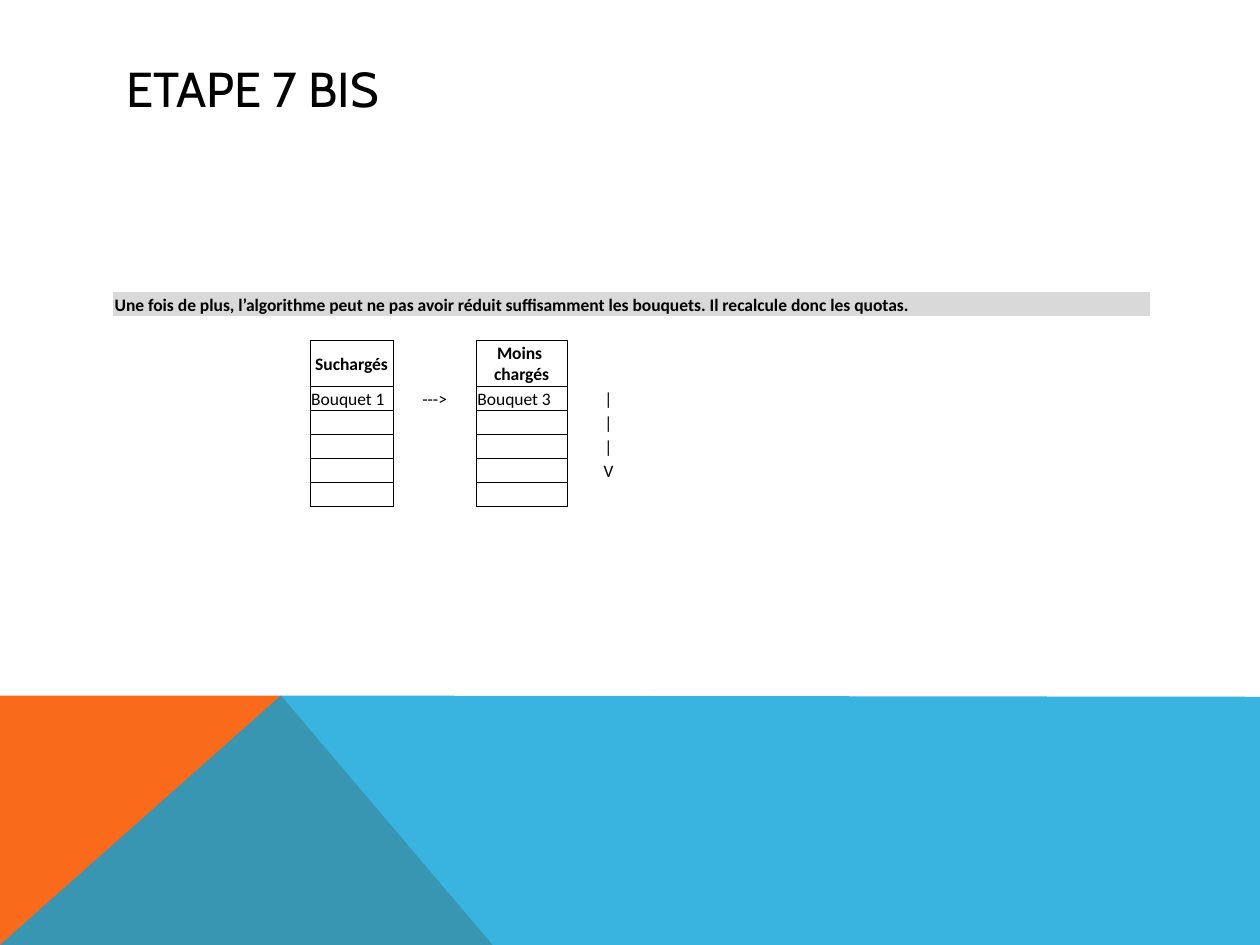
"""Build the "Etape 7 bis" slide with its load-balancing table."""
import pptx
import pptx.dml.color
import pptx.enum.text
import pptx.oxml
import pptx.oxml.ns
import pptx.util

Inches, Pt = pptx.util.Inches, pptx.util.Pt
ANCHOR, ALIGN = pptx.enum.text.MSO_ANCHOR, pptx.enum.text.PP_ALIGN
NS = pptx.oxml.ns.nsdecls("a")
NO_STYLE = "{2D5ABB26-0587-4C30-8999-92F81FD0307C}"


def rgb(value):
    """Turn a hex string into a colour."""
    return pptx.dml.color.RGBColor.from_string(value)


class Deck:
    """Holds the style and the current slide."""

    black, grey, orange, blue = "000000", "D9D9D9", "F96A1B", "08A1D9"
    title_font, body_font = "Cabin", "Calibri"

    def __init__(self):
        """Start a presentation with one title-only slide."""
        self.prs = pptx.Presentation()
        self.prs.slide_width, self.prs.slide_height = Inches(10), Inches(7.5)
        self.s = self.prs.slides.add_slide(self.prs.slide_layouts[5])

    def font(self, p, name, size, bold=False):
        """Set the font of a paragraph."""
        p.font.name, p.font.size, p.font.bold = name, Pt(size), bold
        p.font.color.rgb = rgb(self.black)

    def polygon(self, points, color, alpha=100):
        """Draw a filled outline without a line."""
        points = [(Inches(x), Inches(y)) for x, y in points]
        fb = self.s.shapes.build_freeform(*points[0])
        fb.add_line_segments(points[1:], close=True)
        sp = fb.convert_to_shape()
        sp.shadow.inherit = False
        sp.line.fill.background()
        sp.fill.solid()
        sp.fill.fore_color.rgb = rgb(color)
        if alpha < 100:
            clr = sp.fill._xPr.find(".//" + pptx.oxml.ns.qn("a:srgbClr"))
            clr.append(pptx.oxml.parse_xml(f'<a:alpha {NS} val="{alpha * 1000}"/>'))

    def title(self, text, left, top, width, height):
        """Fill and place the title."""
        sp = self.s.shapes.title
        sp.left, sp.top, sp.width, sp.height = map(Inches, (left, top, width, height))
        tf = sp.text_frame
        tf.text, tf.vertical_anchor = text, ANCHOR.MIDDLE
        p = tf.paragraphs[0]
        p.alignment = ALIGN.LEFT
        self.font(p, self.title_font, 28)

    def table(self, left, top, widths, heights):
        """Add a plain table with empty cells."""
        frame = self.s.shapes.add_table(
            len(heights), len(widths), Inches(left), Inches(top),
            Inches(sum(widths)), Inches(sum(heights)))
        tbl = frame.table
        tbl.first_row = tbl.horz_banding = False
        tbl._tbl.tblPr.find(pptx.oxml.ns.qn("a:tableStyleId")).text = NO_STYLE
        for col, width in zip(tbl.columns, widths):
            col.width = Inches(width)
        for row, height in zip(tbl.rows, heights):
            row.height = Inches(height)
        for cell in tbl.iter_cells():
            self.cell(cell)
        return tbl

    def cell(self, cell, text="", bold=False, align=ALIGN.LEFT, anchor=ANCHOR.BOTTOM):
        """Write and format a cell."""
        cell.margin_left = cell.margin_right = cell.margin_top = Inches(0.01)
        cell.margin_bottom = 0
        cell.vertical_anchor = anchor
        cell.fill.background()
        p = cell.text_frame.paragraphs[0]
        p.text, p.alignment = text, align
        self.font(p, self.body_font, 10, bold)
        if not text and p._p.find(pptx.oxml.ns.qn("a:endParaRPr")) is None:
            p._p.append(pptx.oxml.parse_xml(f'<a:endParaRPr {NS} sz="1000"/>'))

    def box(self, cell):
        """Draw a thin border on all sides of a cell."""
        tcPr = cell._tc.get_or_add_tcPr()
        for i, side in enumerate("LRTB"):
            tcPr.insert(i, pptx.oxml.parse_xml(
                f'<a:ln{side} {NS} w="{Pt(0.5)}"><a:solidFill>'
                f'<a:srgbClr val="{self.black}"/></a:solidFill></a:ln{side}>'))


def main():
    """Build and save the slide."""
    d = Deck()
    d.polygon([(0, 7.5), (0, 5.52), (2.23, 5.52), (3.91, 7.5)], d.orange)
    d.polygon([(0, 7.5), (2.23, 5.52), (10, 5.53), (10, 7.5)], d.blue, 80)
    d.title("ETAPE 7 BIS", 0.9, 0.4, 8.22, 0.6)

    widths = [1.56, 0.66, 0.66, 0.72, 0.66, 0.66, 0.64, 0.66, 0.66, 0.62, 0.73]
    heights = [0.19, 0.19, 0.37] + [0.19] * 5
    tbl = d.table(0.9, 2.32, widths, heights)

    banner = tbl.cell(0, 0)
    banner.merge(tbl.cell(0, len(widths) - 1))
    d.cell(banner, "Une fois de plus, l’algorithme peut ne pas avoir réduit "
           "suffisamment les bouquets. Il recalcule donc les quotas.", bold=True)
    banner.fill.solid()
    banner.fill.fore_color.rgb = rgb(d.grey)

    for col, heading, item in [(1, "Suchargés", "Bouquet 1"),
                               (3, "Moins \vchargés", "Bouquet 3")]:
        d.cell(tbl.cell(2, col), heading, True, ALIGN.CENTER, ANCHOR.MIDDLE)
        d.cell(tbl.cell(3, col), item)
        for row in range(2, len(heights)):
            d.box(tbl.cell(row, col))

    d.cell(tbl.cell(3, 2), "--->", align=ALIGN.CENTER)
    for row, mark in enumerate("|||V", 3):
        d.cell(tbl.cell(row, 4), mark, align=ALIGN.CENTER)
    d.prs.save("out.pptx")


if __name__ == "__main__":
    main()
